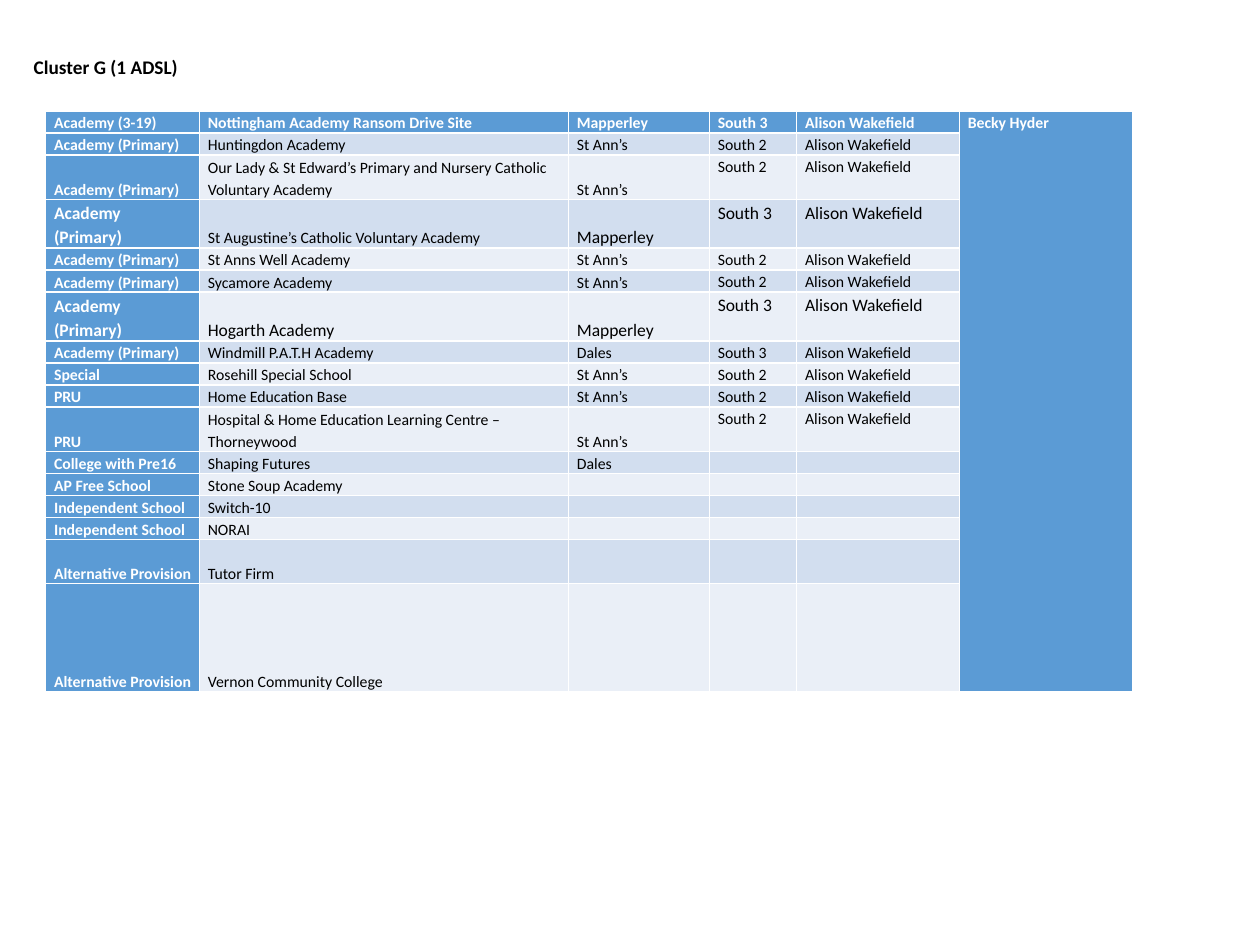
from pptx import Presentation
from pptx.dml.color import RGBColor
from pptx.enum.text import MSO_ANCHOR
from pptx.util import Cm, Pt

FONT = "Calibri"
COLORS = {
    "header": "5B9BD5",
    "dark_band": "D2DEEF",
    "light_band": "EAEFF7",
    "white": "FFFFFF",
    "black": "000000",
}

COLUMN_WIDTHS = [3.1, 7.44, 2.84, 1.76, 3.28, 3.5]
ONE_LINE, TWO_LINES, TWO_LARGE_LINES, LAST_ROW = 0.44, 0.89, 0.97, 2.18
MANAGER = "Alison Wakefield"
SUPERVISOR = "Becky Hyder"

# Row height, then type, school, ward, area and manager
ROWS = [
    (ONE_LINE, "Academy (3-19)", "Nottingham Academy Ransom Drive Site", "Mapperley", "South 3", MANAGER),
    (ONE_LINE, "Academy (Primary)", "Huntingdon Academy", "St Ann’s", "South 2", MANAGER),
    (TWO_LINES, "Academy (Primary)",
     "Our Lady & St Edward’s Primary and Nursery Catholic Voluntary Academy", "St Ann’s", "South 2", MANAGER),
    (TWO_LARGE_LINES, "Academy (Primary)", "St Augustine’s Catholic Voluntary Academy",
     "Mapperley", "South 3", MANAGER),
    (ONE_LINE, "Academy (Primary)", "St Anns Well Academy", "St Ann’s", "South 2", MANAGER),
    (ONE_LINE, "Academy (Primary)", "Sycamore Academy", "St Ann’s", "South 2", MANAGER),
    (TWO_LARGE_LINES, "Academy (Primary)", "Hogarth Academy", "Mapperley", "South 3", MANAGER),
    (ONE_LINE, "Academy (Primary)", "Windmill P.A.T.H Academy", "Dales", "South 3", MANAGER),
    (ONE_LINE, "Special", "Rosehill Special School", "St Ann’s", "South 2", MANAGER),
    (ONE_LINE, "PRU", "Home Education Base", "St Ann’s", "South 2", MANAGER),
    (TWO_LINES, "PRU", "Hospital & Home Education Learning Centre – Thorneywood",
     "St Ann’s", "South 2", MANAGER),
    (ONE_LINE, "College with Pre16", "Shaping Futures", "Dales", "", ""),
    (ONE_LINE, "AP Free School", "Stone Soup Academy", "", "", ""),
    (ONE_LINE, "Independent School", "Switch-10", "", "", ""),
    (ONE_LINE, "Independent School", "NORAI", "", "", ""),
    (TWO_LINES, "Alternative Provision", "Tutor Firm", "", "", ""),
    (LAST_ROW, "Alternative Provision", "Vernon Community College", "", "", ""),
]
SMALL_TEXT_SCHOOL = "St Augustine’s Catholic Voluntary Academy"


def format_text(paragraph, size, color, bold):
    for run in paragraph.runs:
        run.font.name = FONT
        run.font.size = Pt(size)
        run.font.bold = bold
        run.font.color.rgb = RGBColor.from_string(COLORS[color])


presentation = Presentation()
presentation.slide_width = Cm(25.4)
presentation.slide_height = Cm(19.05)
slide = presentation.slides.add_slide(presentation.slide_layouts[6])

# School table; the default table style draws the white cell borders
table_height = sum(row[0] for row in ROWS)
table = slide.shapes.add_table(
    len(ROWS), len(COLUMN_WIDTHS), Cm(0.92), Cm(2.24), Cm(sum(COLUMN_WIDTHS)), Cm(table_height)
).table
table.first_col = True
for column, width in zip(table.columns, COLUMN_WIDTHS):
    column.width = Cm(width)

for row_index, (height, *texts) in enumerate(ROWS):
    table.rows[row_index].height = Cm(height)
    texts.append(SUPERVISOR if row_index == 0 else "")
    band = "dark_band" if row_index % 2 else "light_band"
    for column_index, text in enumerate(texts):
        cell = table.cell(row_index, column_index)
        is_header = row_index == 0 or column_index in (0, 5)
        large = height == TWO_LARGE_LINES and text != SMALL_TEXT_SCHOOL

        cell.fill.solid()
        cell.fill.fore_color.rgb = RGBColor.from_string(COLORS["header" if is_header else band])
        cell.margin_left = cell.margin_right = Cm(0.17)
        cell.margin_top = cell.margin_bottom = 0
        cell.vertical_anchor = MSO_ANCHOR.BOTTOM if column_index < 3 else MSO_ANCHOR.TOP

        cell.text_frame.text = text
        paragraph = cell.text_frame.paragraphs[0]
        paragraph.line_spacing = 1.15
        format_text(paragraph, 10 if large else 9, "white" if is_header else "black", is_header)
        # Keeps empty cells from stretching their row
        paragraph._p.get_or_add_endParaRPr().set("sz", "900")

table.cell(0, 5).merge(table.cell(len(ROWS) - 1, 5))

# Title
title = slide.shapes.add_textbox(Cm(0.43), Cm(0.71), Cm(25.4), Cm(1.27))
title.text_frame.word_wrap = True
title.text_frame.vertical_anchor = MSO_ANCHOR.MIDDLE
title.text_frame.text = "Cluster G (1 ADSL)"
format_text(title.text_frame.paragraphs[0], 11, "black", True)

presentation.save("out.pptx")
